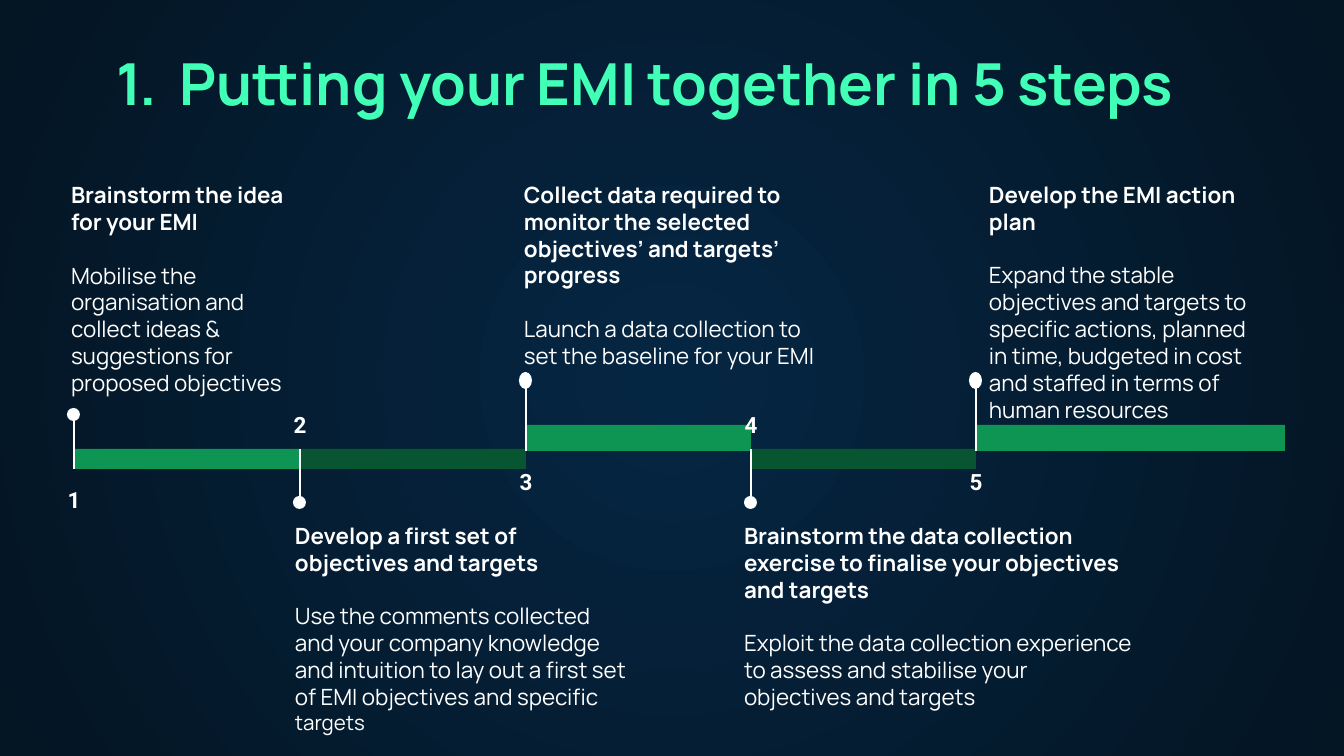
from dataclasses import dataclass

from lxml import etree
from pptx import Presentation
from pptx.dml.color import RGBColor
from pptx.enum.shapes import MSO_CONNECTOR as CONNECTOR, MSO_SHAPE as SHAPE
from pptx.enum.text import MSO_ANCHOR as ANCHOR, MSO_AUTO_SIZE as AUTOSIZE, PP_ALIGN as ALIGN
from pptx.oxml import parse_xml
from pptx.oxml.ns import qn
from pptx.util import Pt

PX = 914400 / 134.4  # EMU in one px
W, H = 1344, 756
INSET = 13
MINT, GREEN, FOREST, WHITE = "42FFB7", "0E9453", "085631", "FFFFFF"
NS = 'xmlns:a="http://schemas.openxmlformats.org/drawingml/2006/main"'


@dataclass
class Level:
    """Bar and pin geometry shared by the steps at one height."""
    color: str
    top: int
    height: int
    pin: int  # centre of the dot, measured from the top of the bar
    dot_height: int
    text_top: int


FIRST = Level(GREEN, 449, 20, -35, 13, 168)
RAISED = Level(GREEN, 425, 26, -45, 17, 168)
LOWER = Level(FOREST, 449, 20, 53, 13, 509)

# level, bar width, text box (offset from bar, width, height), heading, body runs (text, pt)
STEPS = [
    (FIRST, 226, (-16, 262, 239), "Brainstorm the idea for your EMI",
     [("Mobilise the organisation and collect ideas & suggestions for proposed objectives", 12)]),
    (LOWER, 226, (-18, 364, 219), "Develop a first set of objectives and targets",
     [("Use the comments collected and your company knowledge and intuition "
       "to lay out a first set of EMI objectives and specific ", 12), ("targets", 11)]),
    (RAISED, 225, (-15, 331, 202),
     "Collect data required to monitor the selected objectives’ and targets’ progress",
     [("Launch a data collection to set the baseline for your EMI", 12)]),
    (LOWER, 225, (-20, 415, 138),
     "Brainstorm the data collection exercise to finalise your objectives and targets",
     [("Exploit the data collection experience to assess and stabilise your "
       "objectives and targets", 12)]),
    (RAISED, 309, (0, 298, 220), "Develop the EMI action plan",
     [("Expand the stable objectives and targets to specific actions, planned in time, "
       "budgeted in cost and staffed in terms of human resources", 12)]),
]


def emu(*lengths):
    return [round(length * PX) for length in lengths]


def rgb(color):
    return RGBColor.from_string(color)


def format_frame(frame):
    margins = dict.fromkeys(
        ("margin_left", "margin_top", "margin_right", "margin_bottom"), emu(INSET)[0])
    values = {**margins, "word_wrap": True, "auto_size": AUTOSIZE.NONE,
              "vertical_anchor": ANCHOR.TOP}
    for name, value in values.items():
        setattr(frame, name, value)


def add_run(paragraph, text, size, font, color, bold):
    run = paragraph.add_run()
    run.text = text
    for name, value in {"size": Pt(size), "name": font, "bold": bold}.items():
        setattr(run.font, name, value)
    run.font.color.rgb = rgb(color)


def add_solid(shapes, kind, box, color):
    solid = shapes.add_shape(kind, *emu(*box))
    solid.shadow.inherit = False
    solid.fill.solid()
    solid.fill.fore_color.rgb = rgb(color)
    solid.line.fill.background()


def add_stem(shapes, x, start, end):
    stem = shapes.add_connector(CONNECTOR.STRAIGHT, *emu(x, start, x, end))
    stem.line.color.rgb = rgb(WHITE)
    stem.line.width = Pt(0.75)
    etree.SubElement(stem._element.spPr, qn("a:effectLst"))


def add_text_frame(shapes, box):
    frame = shapes.add_textbox(*emu(*box)).text_frame
    format_frame(frame)
    return frame


def paint_background(slide):
    fill = slide.background.fill
    fill.gradient()
    for stop, color in zip(fill.gradient_stops, ("052643", "041523")):
        stop.color.rgb = rgb(color)
    linear = next(slide._element.iter(qn("a:lin")))
    linear.getparent().replace(linear, parse_xml(
        f'<a:path {NS} path="circle">'
        '<a:fillToRect l="50000" t="50000" r="50000" b="50000"/></a:path>'))


def set_title(slide, box, text):
    title = slide.shapes.title
    title.left, title.top, title.width, title.height = emu(*box)
    format_frame(title.text_frame)
    heading = title.text_frame.paragraphs[0]
    heading.alignment = ALIGN.CENTER
    add_run(heading, text, 31, "Manrope", MINT, True)
    # Automatic number with a hanging indent
    props = heading._p.get_or_add_pPr()
    left, hanging = emu(67, -63)
    props.set("marL", str(left))
    props.set("indent", str(hanging))
    for bullet in (f'<a:buClr {NS}><a:srgbClr val="{MINT}"/></a:buClr>',
                   f'<a:buFont {NS} typeface="Manrope"/>',
                   f'<a:buAutoNum {NS} type="arabicPeriod"/>'):
        props.append(parse_xml(bullet))


def add_step(slide, number, bar, level, text_box, heading, body):
    x, top, width, height = bar
    points_up = level.pin < 0
    shapes = slide.shapes.add_group_shape().shapes
    add_solid(shapes, SHAPE.RECTANGLE, bar, level.color)

    # Pin crosses the bar and ends in a dot
    pin = top + level.pin
    add_stem(shapes, x, pin, top + height if points_up else top)
    add_solid(shapes, SHAPE.OVAL, (x - 7, pin - level.dot_height // 2, 13, level.dot_height), WHITE)

    # Number sits on the side away from the pin
    number_top = top + height if points_up else top - 55
    label = add_text_frame(shapes, (x - 55, number_top, 110, 55)).paragraphs[0]
    label.alignment = ALIGN.CENTER
    label.line_spacing = 1.15
    add_run(label, str(number), 12, "Roboto", WHITE, True)

    # Heading and description
    offset, text_width, text_height = text_box
    frame = add_text_frame(shapes, (x + offset, level.text_top, text_width, text_height))
    name = frame.paragraphs[0]
    name.space_after = Pt(14.4)
    add_run(name, heading, 12, "Manrope", WHITE, True)
    description = frame.add_paragraph()
    for text, size in body:
        add_run(description, text, size, "Manrope", WHITE, False)


def add_timeline(slide, x):
    for number, (level, width, text_box, heading, body) in enumerate(STEPS, 1):
        bar = (x, level.top, width, level.height)
        add_step(slide, number, bar, level, text_box, heading, body)
        x += width


def main():
    deck = Presentation()
    deck.slide_width, deck.slide_height = emu(W, H)
    slide = deck.slides.add_slide(deck.slide_layouts[5])
    paint_background(slide)
    set_title(slide, (11, 35, 1263, 153), "Putting your EMI together in 5 steps")
    add_timeline(slide, 74)
    deck.save("out.pptx")


if __name__ == "__main__":
    main()
